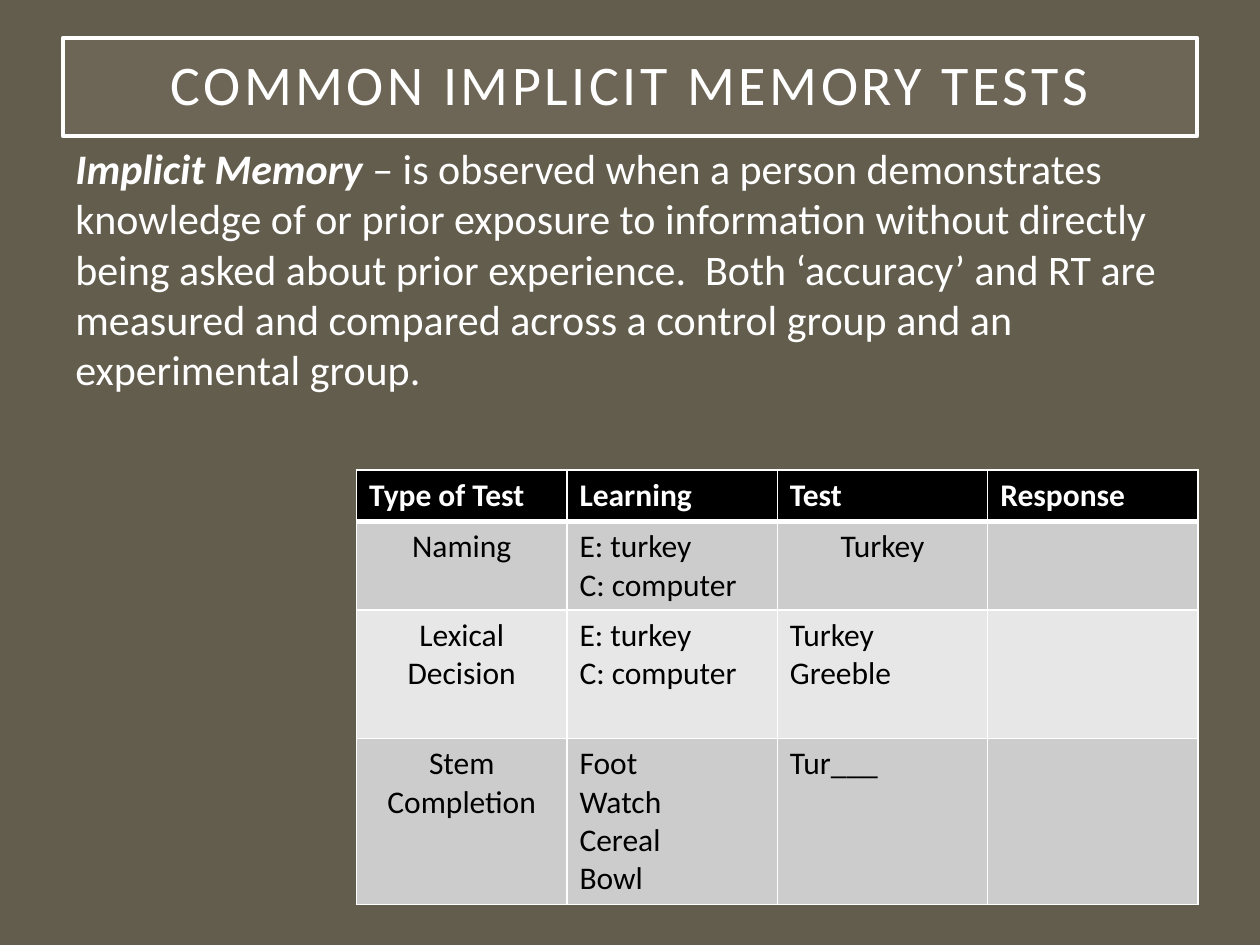
from lxml import etree
from pptx import Presentation
from pptx.dml.color import RGBColor
from pptx.enum.text import MSO_ANCHOR, PP_ALIGN
from pptx.oxml.ns import qn
from pptx.util import Inches, Pt

WHITE = RGBColor(0xFF, 0xFF, 0xFF)
BLACK = RGBColor(0x00, 0x00, 0x00)
BACKGROUND = RGBColor(0x63, 0x5D, 0x4D)
TITLE_FILL = RGBColor(0xA7, 0xA0, 0x8E)
BANDS = (RGBColor(0xCC, 0xCC, 0xCC), RGBColor(0xE7, 0xE7, 0xE7))

LEFT, CENTER = PP_ALIGN.LEFT, PP_ALIGN.CENTER
MIDDLE, TOP = MSO_ANCHOR.MIDDLE, MSO_ANCHOR.TOP
FONT = "Calibri"

DEFINITION = (
    " – is observed when a person demonstrates knowledge of or prior exposure "
    "to information without directly being asked about prior experience.  Both "
    "‘accuracy’ and RT are measured and compared across a control group and an "
    "experimental group."
)
HEADERS = ("Type of Test", "Learning", "Test", "Response")
# Each row: cell texts, then the columns that are centred
TESTS = (
    (("Naming", "E: turkey\nC: computer", "Turkey", ""), (0, 2)),
    (("Lexical Decision", "E: turkey\nC: computer", "Turkey\nGreeble", ""), (0,)),
    (("Stem Completion", "Foot\nWatch\nCereal\nBowl", "Tur___", ""), (0,)),
)
ROW_HEIGHTS = (0.41, 0.7, 1.02, 1.32)
COLUMN_WIDTH = 1.67


def add_run(paragraph, text, color, **formats):
    run = paragraph.add_run()
    run.text = text
    run.font.color.rgb = color
    for name, value in {"name": FONT, **formats}.items():
        setattr(run.font, name, value)
    return run


def place(shape, left, top, width, height):
    box = {"left": left, "top": top, "width": width, "height": height}
    for name, value in box.items():
        setattr(shape, name, Inches(value))


def format_title(title):
    place(title, 0.5, 0.3, 9, 0.78)
    title.fill.solid()
    title.fill.fore_color.rgb = TITLE_FILL
    color = title.fill._xPr.find(f"{qn('a:solidFill')}/{qn('a:srgbClr')}")
    etree.SubElement(color, qn("a:alpha"), val="15000")
    title.line.color.rgb = WHITE
    title.line.width = Pt(2.5)

    frame = title.text_frame
    frame.vertical_anchor = MIDDLE
    for side in ("left", "top", "right", "bottom"):
        setattr(frame, f"margin_{side}", Inches(0.2))
    paragraph = frame.paragraphs[0]
    paragraph.alignment = CENTER
    paragraph.line_spacing = 0.9
    run = add_run(paragraph, "COMMON IMPLICIT MEMORY TESTS", WHITE, size=Pt(32))
    run.font._element.set("spc", "200")  # letter spacing of 2 pt


def add_definition(slide):
    text_box = slide.shapes.add_textbox(Inches(0.5), Inches(1.08), Inches(9), Inches(6.2))
    frame = text_box.text_frame
    frame.word_wrap = True
    frame.vertical_anchor = TOP
    paragraph = frame.paragraphs[0]
    paragraph.space_before = Pt(10)
    add_run(paragraph, "Implicit Memory", WHITE, size=Pt(24), bold=True, italic=True)
    add_run(paragraph, DEFINITION, WHITE, size=Pt(24))


def set_borders(cell, widths):
    properties = cell._tc.get_or_add_tcPr()
    for index, (side, width) in enumerate(widths.items()):
        line = etree.Element(qn(f"a:ln{side}"), w=str(Pt(width)))
        fill = etree.SubElement(line, qn("a:solidFill"))
        etree.SubElement(fill, qn("a:srgbClr"), val=str(WHITE))
        properties.insert(index, line)


def fill_cell(cell, text, fill, color, alignment=LEFT, bold=False, top=1, bottom=1):
    cell.fill.solid()
    cell.fill.fore_color.rgb = fill
    set_borders(cell, {"L": 1, "R": 1, "T": top, "B": bottom})
    if not text:
        return
    frame = cell.text_frame
    for index, line in enumerate(text.split("\n")):
        paragraph = frame.add_paragraph() if index else frame.paragraphs[0]
        paragraph.alignment = alignment
        add_run(paragraph, line, color, size=Pt(18), bold=bold)


def add_test_table(slide):
    table = slide.shapes.add_table(
        len(ROW_HEIGHTS), len(HEADERS), Inches(2.83), Inches(3.73),
        Inches(COLUMN_WIDTH * len(HEADERS)), Inches(sum(ROW_HEIGHTS)),
    ).table
    for column in table.columns:
        column.width = Inches(COLUMN_WIDTH)
    for row, height in zip(table.rows, ROW_HEIGHTS):
        row.height = Inches(height)

    for column, text in enumerate(HEADERS):
        fill_cell(table.cell(0, column), text, BLACK, WHITE, bold=True, bottom=3)
    for row, (texts, centred) in enumerate(TESTS, start=1):
        for column, text in enumerate(texts):
            fill_cell(
                table.cell(row, column), text, BANDS[(row - 1) % 2], BLACK,
                alignment=CENTER if column in centred else LEFT,
                top=3 if row == 1 else 1,
            )


def main():
    presentation = Presentation()
    presentation.slide_width = Inches(10)
    presentation.slide_height = Inches(7.5)
    slide = presentation.slides.add_slide(presentation.slide_layouts[5])
    slide.background.fill.solid()
    slide.background.fill.fore_color.rgb = BACKGROUND

    format_title(slide.shapes.title)
    add_definition(slide)
    add_test_table(slide)
    presentation.save("out.pptx")


if __name__ == "__main__":
    main()
